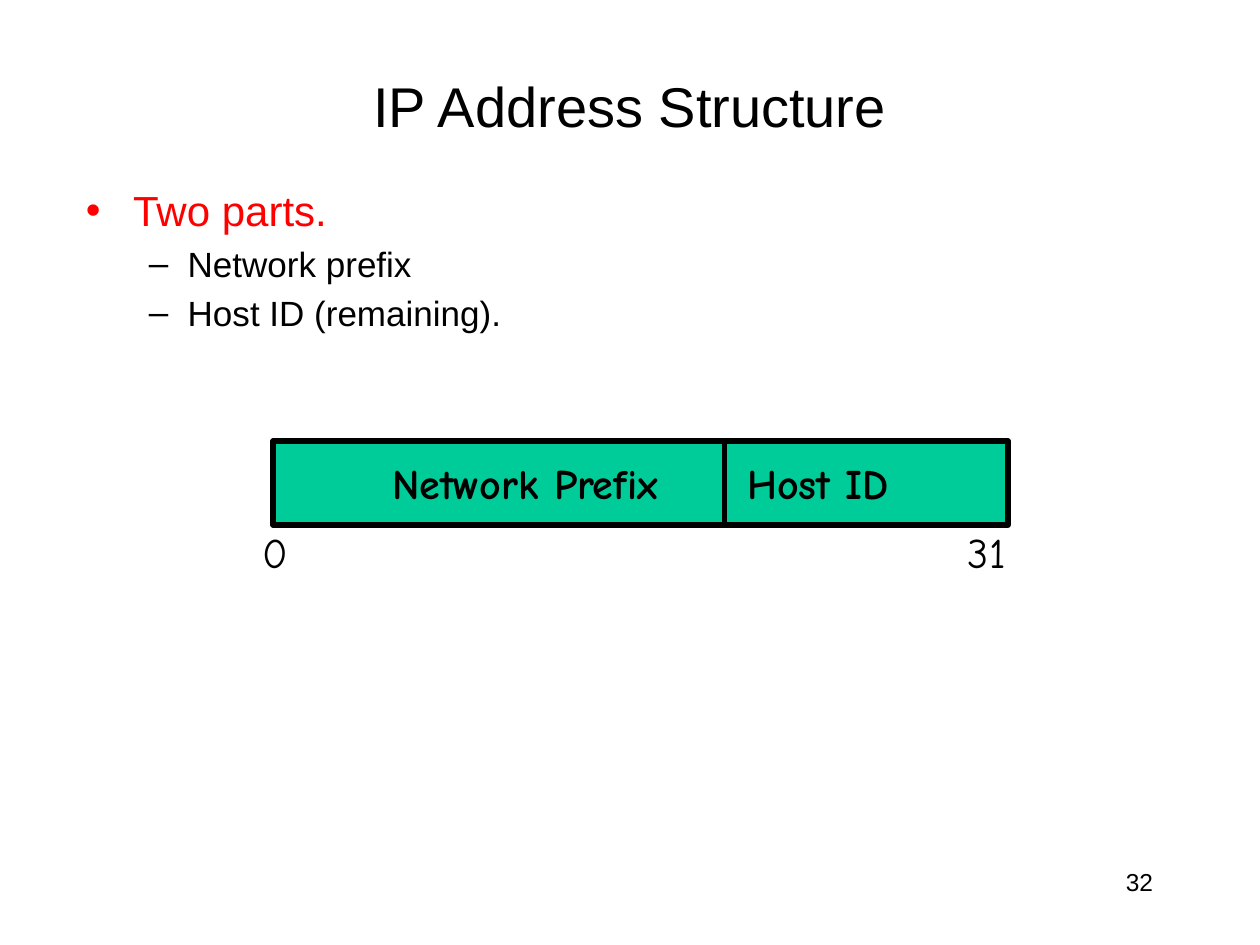
from lxml import etree
from pptx import Presentation, util as u
from pptx.dml.color import RGBColor
from pptx.enum import shapes, text
from pptx.oxml.ns import qn

HEX = {"ink": "000000", "red": "FF0000", "green": "00CC99"}
SANS, HAND = "Arial", "Comic Neue"
LEFT, MID, RIGHT = text.PP_ALIGN.LEFT, text.PP_ALIGN.CENTER, text.PP_ALIGN.RIGHT
TOP, CORE = text.MSO_ANCHOR.TOP, text.MSO_ANCHOR.MIDDLE

# Content: words, box in px, size, font, bold, alignment, anchor
TITLE = ("IP Address Structure", (90, 50, 1020, 100), 32, SANS, False, MID, CORE)
PAGE = ("32", (860, 820, 250, 60), 14, SANS, False, RIGHT, TOP)
FIELDS = [
    ("Network Prefix", (350, 420, 300, 80), 24, HAND, True, MID, CORE),
    ("Host ID", (690, 420, 178, 80), 24, HAND, True, MID, CORE),
]
BITS = [
    ("0", (238, 496, 48, 60), 24, HAND, False, LEFT, TOP),
    ("31", (910, 496, 66, 60), 24, HAND, False, LEFT, TOP),
]
# Bullets: words, level
POINTS = [("Two parts.", 0), ("Network prefix", 1), ("Host ID (remaining).", 1)]
# Level style: size, colour, mark, left margin, hanging indent
LEVELS = [(24, "red", "•", 45, 45), (20, "ink", "–", 97, 37)]
BODY = (70, 170, 1020, 620)
BAR = (260, 420, 700, 80)
SPLIT = 690


def px(n):
    return u.Emu(n * 7620)  # 120 px to the inch


def tint(key):
    return RGBColor.from_string(HEX[key])


def style(para, size, face, key="ink", bold=False):
    for run in para.runs:
        font = run.font
        font.size, font.name, font.bold = u.Pt(size), face, bold
        font.color.rgb = tint(key)


def add_box(slide, box):
    frame = slide.shapes.add_textbox(*map(px, box)).text_frame
    frame.word_wrap = True
    return frame


def add_label(slide, words, box, size, face, bold, align, anchor):
    frame = add_box(slide, box)
    frame.text = words
    frame.vertical_anchor = anchor
    para = frame.paragraphs[0]
    para.alignment = align
    style(para, size, face, bold=bold)


def add_points(slide):
    frame = add_box(slide, BODY)
    for i, (words, level) in enumerate(POINTS):
        size, key, mark, left, hang = LEVELS[level]
        para = frame.add_paragraph() if i else frame.paragraphs[0]
        para.text, para.level = words, level
        para.space_before = u.Pt(size * 0.2)
        style(para, size, SANS, key)
        props = para._p.get_or_add_pPr()
        props.set("marL", str(px(left)))
        props.set("indent", str(-px(hang)))
        etree.SubElement(props, qn("a:buFont"), typeface=SANS)
        etree.SubElement(props, qn("a:buChar"), char=mark)


def add_bar(slide):
    bar = slide.shapes.add_shape(shapes.MSO_SHAPE.RECTANGLE, *map(px, BAR))
    bar.shadow.inherit = False
    bar.fill.solid()
    bar.fill.fore_color.rgb = tint("green")
    top, high = BAR[1], BAR[3]
    rule = slide.shapes.add_connector(
        shapes.MSO_CONNECTOR.STRAIGHT, *map(px, (SPLIT, top, SPLIT, top + high)))
    for part in (bar, rule):
        part.line.color.rgb = tint("ink")
        part.line.width = u.Pt(3)
    etree.SubElement(rule._element.spPr, qn("a:effectLst"))


def main():
    deck = Presentation()
    deck.slide_width, deck.slide_height = px(1200), px(900)
    slide = deck.slides.add_slide(deck.slide_layouts[6])
    add_label(slide, *TITLE)
    add_points(slide)
    # Address bar with its fields and bit numbers
    add_bar(slide)
    for label in FIELDS + BITS + [PAGE]:
        add_label(slide, *label)
    deck.save("out.pptx")


if __name__ == "__main__":
    main()
